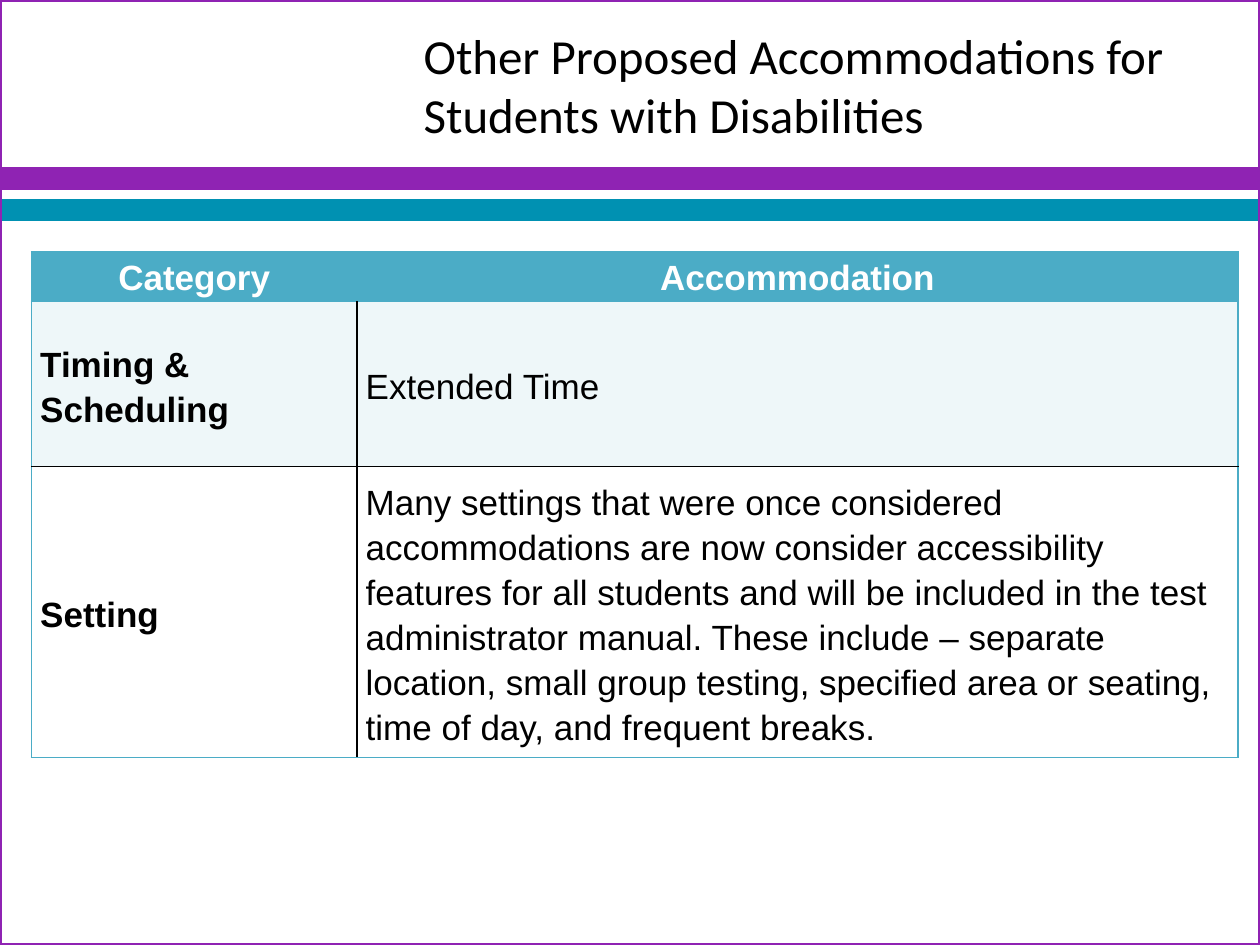
from pptx import Presentation
from pptx.dml.color import RGBColor
from pptx.enum.shapes import MSO_SHAPE as Shape
from pptx.enum.text import MSO_ANCHOR as Anchor, PP_ALIGN as Align
from pptx.oxml import parse_xml
from pptx.oxml.ns import nsdecls
from pptx.util import Pt

BLACK = RGBColor(0, 0, 0)
WHITE = RGBColor(255, 255, 255)
PURPLE = RGBColor(0x8F, 0x23, 0xB3)
TEAL = RGBColor(0x00, 0x91, 0xB2)
BLUE = RGBColor(0x4B, 0xAC, 0xC6)
PALE = RGBColor(0xEE, 0xF7, 0xF9)


def add_rect(top, height, fill, line, width):
    rect = slide.shapes.add_shape(Shape.RECTANGLE, 0, Pt(top), Pt(720), Pt(height))
    rect.shadow.inherit = False
    if fill is None:
        rect.fill.background()
    else:
        rect.fill.solid()
        rect.fill.fore_color.rgb = fill
    rect.line.color.rgb = line
    rect.line.width = Pt(width)


def add_edge(cell, side, color):
    cell._tc.get_or_add_tcPr().append(parse_xml(
        f'<a:ln{side} {nsdecls("a")} w="{Pt(1)}"><a:solidFill>'
        f'<a:srgbClr val="{color}"/></a:solidFill></a:ln{side}>'))


deck = Presentation()
deck.slide_width, deck.slide_height = Pt(720), Pt(540)
slide = deck.slides.add_slide(deck.slide_layouts[6])

add_rect(96, 12, PURPLE, PURPLE, 0.75)
add_rect(114, 12, TEAL, TEAL, 0.75)
add_rect(0, 540, None, PURPLE, 2.25)

title = slide.shapes.add_textbox(Pt(222), 0, Pt(498), Pt(96))
frame = title.text_frame
frame.word_wrap = True
frame.vertical_anchor = Anchor.MIDDLE
para = frame.paragraphs[0]
para.text = "Other Proposed Accommodations for Students with Disabilities"
para.font.name = "Calibri"
para.font.size = Pt(28)
para.font.color.rgb = BLACK
para._p.get_or_add_pPr().set("marL", str(Pt(13)))

rows = [
    ("Category", "Accommodation"),
    ("Timing & Scheduling", "Extended Time"),
    ("Setting", "Many settings that were once considered accommodations are now "
     "consider accessibility features for all students and will be included in "
     "the test administrator manual. These include – separate location, small "
     "group testing, specified area or seating, time of day, and frequent breaks."),
]
fills = [BLUE, PALE, WHITE]
heights = [14.4, 94.3, 149]
widths = [186, 503.5]

table = slide.shapes.add_table(
    3, 2, Pt(18), Pt(144), Pt(sum(widths)), Pt(sum(heights))).table
table.first_row = table.horz_banding = False
for col, width in zip(table.columns, widths):
    col.width = Pt(width)

for r, texts in enumerate(rows):
    table.rows[r].height = Pt(heights[r])
    head = r == 0
    for c, text in enumerate(texts):
        cell = table.cell(r, c)
        inner = BLUE if head else BLACK
        add_edge(cell, "L", inner if c == 1 else BLUE)
        add_edge(cell, "R", inner if c == 0 else BLUE)
        add_edge(cell, "T", BLACK if r == 2 else BLUE)
        add_edge(cell, "B", BLACK if r == 1 else BLUE)
        cell.fill.solid()
        cell.fill.fore_color.rgb = fills[r]
        cell.margin_left = cell.margin_right = Pt(5)
        cell.margin_top, cell.margin_bottom = Pt(0.7), 0
        cell.vertical_anchor = Anchor.TOP if head else Anchor.MIDDLE
        para = cell.text_frame.paragraphs[0]
        para.text = text
        para.alignment = Align.CENTER if head else Align.LEFT
        para.line_spacing = 1.15
        para.space_after = Pt(10)
        para.font.name = "Arial"
        para.font.size = Pt(20)
        para.font.bold = head or c == 0
        para.font.color.rgb = WHITE if head else BLACK

deck.save("out.pptx")
